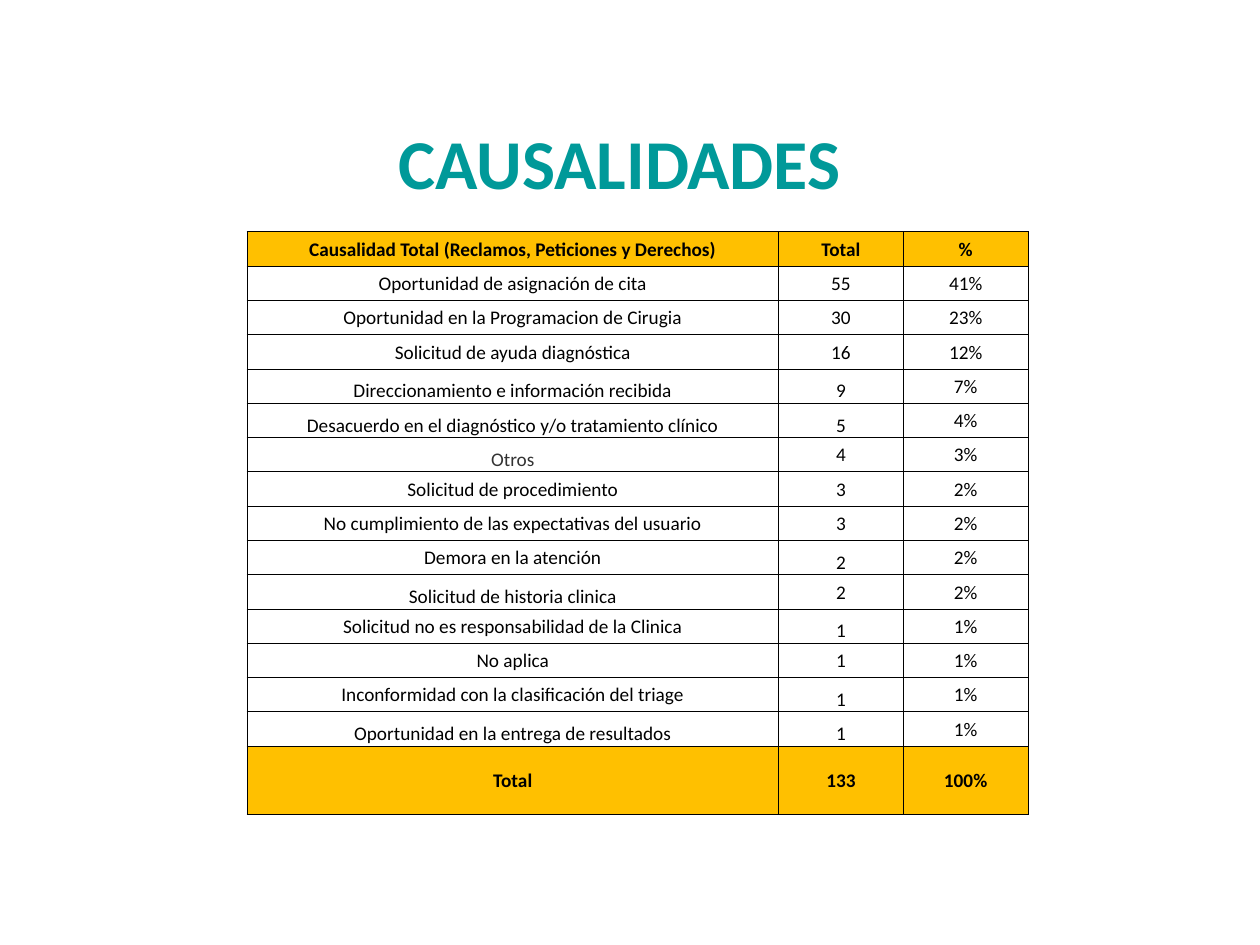
from lxml import etree
from pptx import Presentation
from pptx.dml import color
from pptx.enum import text
from pptx.oxml import ns
from pptx.util import Inches, Pt

FONT = "Calibri"
TEAL, AMBER, WHITE, BLACK, GREY = "009999", "FFC000", "FFFFFF", "000000", "333333"
MIDDLE, BOTTOM = text.MSO_ANCHOR.MIDDLE, text.MSO_ANCHOR.BOTTOM
ANCHORS = {"m": MIDDLE, "b": BOTTOM}

COLUMN_WIDTHS = [4.22, 0.99, 0.99]
TABLE_HEIGHT = 4.63
HEADER = ("Causalidad Total (Reclamos, Peticiones y Derechos)", "Total", "%")
TOTAL = ("Total", "133", "100%")
# Cause, count, share, and the vertical anchors of the three cells
CAUSES = [
    ("Oportunidad de asignación de cita", "55", "41%", "mmm"),
    ("Oportunidad en la Programacion de Cirugia", "30", "23%", "mmm"),
    ("Solicitud de ayuda diagnóstica", "16", "12%", "mmm"),
    ("Direccionamiento e información recibida", "9", "7%", "bbm"),
    ("Desacuerdo en el diagnóstico y/o tratamiento clínico", "5", "4%", "bbm"),
    ("Otros", "4", "3%", "bmm"),
    ("Solicitud de procedimiento", "3", "2%", "mmm"),
    ("No cumplimiento de las expectativas del usuario", "3", "2%", "mmm"),
    ("Demora en la atención", "2", "2%", "mbm"),
    ("Solicitud de historia clinica", "2", "2%", "bmm"),
    ("Solicitud no es responsabilidad de la Clinica", "1", "1%", "mbm"),
    ("No aplica", "1", "1%", "mmm"),
    ("Inconformidad con la clasificación del triage", "1", "1%", "mbm"),
    ("Oportunidad en la entrega de resultados", "1", "1%", "bbm"),
]


def rgb(value):
    return color.RGBColor.from_string(value)


def style_paragraph(paragraph, size, font_color, bold):
    paragraph.alignment = text.PP_ALIGN.CENTER
    font = paragraph.font
    font.name, font.size, font.bold = FONT, Pt(size), bold
    font.color.rgb = rgb(font_color)


def add_title(slide, words):
    box = slide.shapes.add_textbox(Inches(1.65), Inches(0.9), Inches(6.66), Inches(0.77))
    frame = box.text_frame
    frame.word_wrap = True
    frame.auto_size = text.MSO_AUTO_SIZE.SHAPE_TO_FIT_TEXT
    frame.text = words
    style_paragraph(frame.paragraphs[0], 40, TEAL, True)


def set_borders(cell, line_color, width):
    properties = cell._tc.get_or_add_tcPr()
    for side in ("a:lnL", "a:lnR", "a:lnT", "a:lnB"):
        line = etree.SubElement(properties, ns.qn(side), w=str(Pt(width)))
        fill = etree.SubElement(line, ns.qn("a:solidFill"))
        etree.SubElement(fill, ns.qn("a:srgbClr"), val=line_color)


def fill_cell(cell, words, fill_color, font_color=BLACK, bold=False, anchor=MIDDLE):
    cell.text = words
    cell.vertical_anchor = anchor
    cell.margin_left = cell.margin_right = cell.margin_top = Inches(0.01)
    cell.margin_bottom = 0
    set_borders(cell, BLACK, 0.5)
    cell.fill.solid()
    cell.fill.fore_color.rgb = rgb(fill_color)
    style_paragraph(cell.text_frame.paragraphs[0], 11, font_color, bold)


def add_causes_table(slide):
    row_count = len(CAUSES) + 2
    frame = slide.shapes.add_table(
        row_count, len(COLUMN_WIDTHS), Inches(1.96), Inches(1.84),
        Inches(sum(COLUMN_WIDTHS)), Inches(TABLE_HEIGHT))
    table = frame.table
    table.horz_banding = False

    # The total row is twice as tall as the others
    for column, width in zip(table.columns, COLUMN_WIDTHS):
        column.width = Inches(width)
    row_height = Inches(TABLE_HEIGHT / (row_count + 1))
    for row in table.rows:
        row.height = row_height
    table.rows[row_count - 1].height = 2 * row_height

    # Header and total
    for row, values in ((0, HEADER), (row_count - 1, TOTAL)):
        for column, value in enumerate(values):
            fill_cell(table.cell(row, column), value, AMBER, bold=True)

    # Causes
    for row, (*values, anchors) in enumerate(CAUSES, start=1):
        for column, (value, anchor) in enumerate(zip(values, anchors)):
            font_color = GREY if value == "Otros" else BLACK
            fill_cell(table.cell(row, column), value, WHITE, font_color,
                      anchor=ANCHORS[anchor])


def main():
    presentation = Presentation()
    presentation.slide_width, presentation.slide_height = Inches(10), Inches(7.5)
    slide = presentation.slides.add_slide(presentation.slide_layouts[6])
    add_title(slide, "CAUSALIDADES ")
    add_causes_table(slide)
    presentation.save("out.pptx")


if __name__ == "__main__":
    main()
